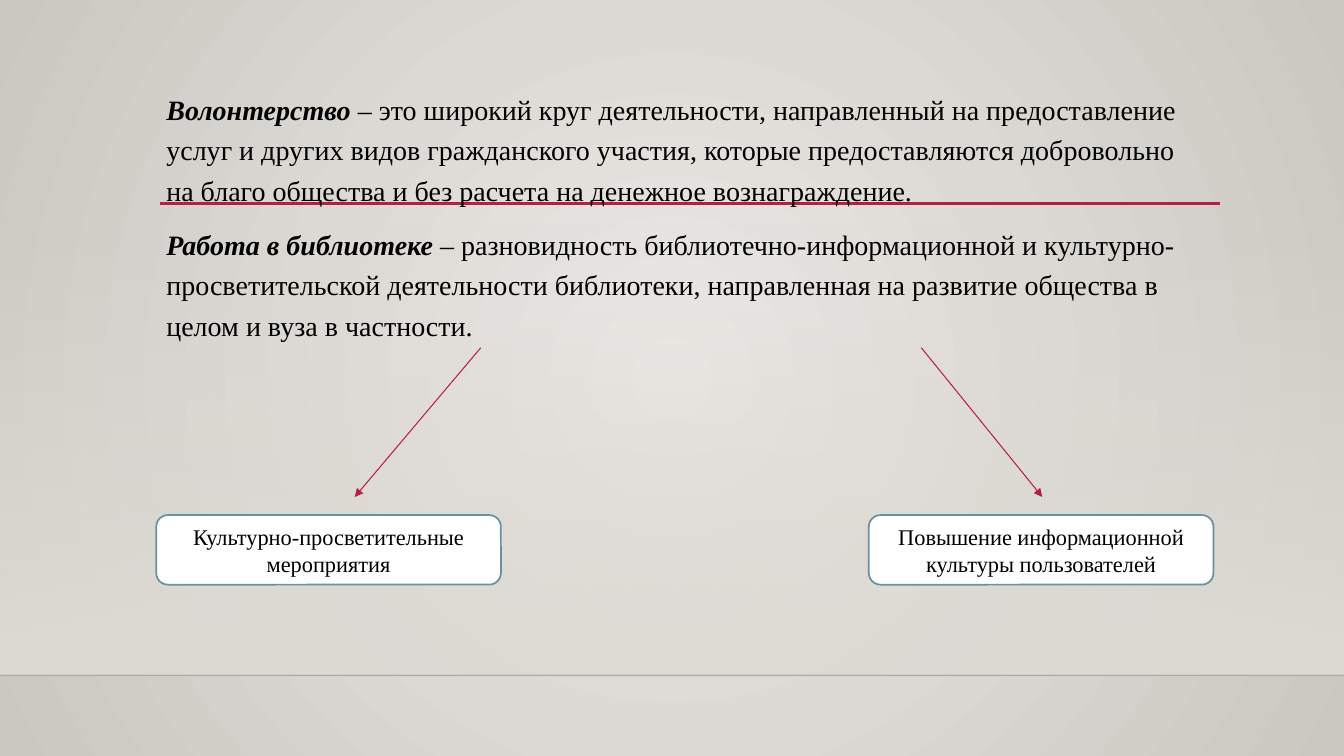
from dataclasses import dataclass

from lxml import etree
from pptx import Presentation, util as u
from pptx.dml import color
from pptx.enum import shapes, text
from pptx.oxml import ns, parse_xml

FONT = "Times New Roman"
BLACK, RED = "000000", "B71E42"
NSA = ns.nsdecls("a")


@dataclass
class Line:
    start: tuple[float, float]
    end: tuple[float, float]
    ink: str
    width: float
    alpha: int = 100
    arrow: bool = False


@dataclass
class Box:
    left: float
    words: str


@dataclass
class Term:
    name: str
    sense: str
    gap: float


EDGE = Line((0, 482.4), (960, 482.4), "000001", 1, alpha=20)
RULE = Line((114.5, 145.4), (871.2, 145.4), RED, 2.5)
ARROWS = [
    Line((343.4, 248.4), (253.4, 355), RED, 0.75, arrow=True),
    Line((658.1, 248.4), (744.5, 355), RED, 0.75, arrow=True),
]
BOXES = [
    Box(111.6, "Культурно-просветительные мероприятия"),
    Box(620.6, "Повышение информационной культуры пользователей"),
]
TERMS = [
    Term(
        "Волонтерство ",
        "– это широкий круг деятельности, направленный на предоставление услуг "
        "и других видов гражданского участия, которые предоставляются добровольно "
        "на благо общества и без расчета на денежное вознаграждение.",
        0,
    ),
    Term(
        "Работа в библиотеке ",
        "– разновидность библиотечно-информационной и культурно-просветительской "
        "деятельности библиотеки, направленная на развитие общества в целом "
        "и вуза в частности.",
        10,
    ),
]


def paint(form, ink: str) -> None:
    form.rgb = color.RGBColor.from_string(ink)


def write(para, words: str, size: float, bold: bool = False, slant: bool = False) -> None:
    run = para.add_run()
    run.text = words
    font = run.font
    font.name, font.size = FONT, u.Pt(size)
    font.bold, font.italic = bold, slant
    paint(font.color, BLACK)


def fade(fill, inks: list[str]):
    fill.gradient()
    for stop, ink in zip(fill.gradient_stops, inks):
        paint(stop.color, ink)
    for stop, place in zip(fill.gradient_stops, (0, 1)):
        stop.position = place


def back(slide) -> None:
    fade(slide.background.fill, ["ECEAE7", "CAC7C1"])
    lin = slide.background._cSld.find(".//" + ns.qn("a:lin"))
    ring = parse_xml(
        f'<a:path {NSA} path="circle">'
        '<a:fillToRect l="50000" t="50000" r="50000" b="50000"/></a:path>'
    )
    lin.getparent().replace(lin, ring)


def clear(node, share: int) -> None:
    etree.SubElement(node, ns.qn("a:alpha"), val=str(share * 1000))


def band(slide) -> None:
    shape = slide.shapes.add_shape(
        shapes.MSO_SHAPE.RECTANGLE, u.Pt(0), u.Pt(159.1), u.Pt(960), u.Pt(323.3)
    )
    shape.shadow.inherit = False
    shape.line.fill.background()
    fade(shape.fill, ["DFDBD5", "DFDBD5"])
    props = shape._element.spPr
    clear(props.find(".//" + ns.qn("a:srgbClr")), 0)
    props.find(".//" + ns.qn("a:lin")).set("ang", "5400000")


def draw(slide, line: Line) -> None:
    ends = [u.Pt(x) for x in (*line.start, *line.end)]
    link = slide.shapes.add_connector(shapes.MSO_CONNECTOR.STRAIGHT, *ends)
    link.line.width = u.Pt(line.width)
    link.line.fill.solid()
    paint(link.line.color, line.ink)
    props = link._element.spPr
    if line.alpha < 100:
        clear(props.find(".//" + ns.qn("a:srgbClr")), line.alpha)
    if line.arrow:
        etree.SubElement(props.find(ns.qn("a:ln")), ns.qn("a:tailEnd"), type="triangle")
    etree.SubElement(props, ns.qn("a:effectLst"))


def label(slide, box: Box) -> None:
    shape = slide.shapes.add_shape(
        shapes.MSO_SHAPE.ROUNDED_RECTANGLE,
        u.Pt(box.left), u.Pt(367.9), u.Pt(246.2), u.Pt(49.7),
    )
    shape.shadow.inherit = False
    shape.fill.solid()
    paint(shape.fill.fore_color, "FFFFFF")
    paint(shape.line.color, "6892A0")
    shape.line.width = u.Pt(1.25)
    frame = shape.text_frame
    frame.word_wrap = True
    frame.vertical_anchor = text.MSO_ANCHOR.MIDDLE
    para = frame.paragraphs[0]
    para.alignment = text.PP_ALIGN.CENTER
    write(para, box.words, 16)


def define(slide, terms: list[Term]) -> None:
    body = slide.placeholders[1]
    body.left, body.top = u.Pt(111.6), u.Pt(57.6)
    body.width, body.height = u.Pt(756), u.Pt(388.8)
    frame = body.text_frame
    frame.word_wrap = True
    frame.auto_size = text.MSO_AUTO_SIZE.NONE
    frame.vertical_anchor = text.MSO_ANCHOR.TOP
    for i, term in enumerate(terms):
        para = frame.add_paragraph() if i else frame.paragraphs[0]
        props = para._p.get_or_add_pPr()
        props.set("marL", "0")
        props.set("indent", "0")
        etree.SubElement(props, ns.qn("a:buNone"))
        para.line_spacing = 1.2
        para.space_before = u.Pt(term.gap)
        write(para, term.name, 20, bold=True, slant=True)
        write(para, term.sense, 20)
    slide.shapes._spTree.append(body._element)


def main() -> None:
    deck = Presentation()
    deck.slide_width, deck.slide_height = u.Pt(960), u.Pt(540)
    slide = deck.slides.add_slide(deck.slide_layouts[1])
    title = slide.shapes.title._element
    title.getparent().remove(title)
    back(slide)
    band(slide)
    draw(slide, EDGE)
    draw(slide, RULE)
    define(slide, TERMS)
    for arrow in ARROWS:
        draw(slide, arrow)
    for box in BOXES:
        label(slide, box)
    deck.save("out.pptx")


if __name__ == "__main__":
    main()
